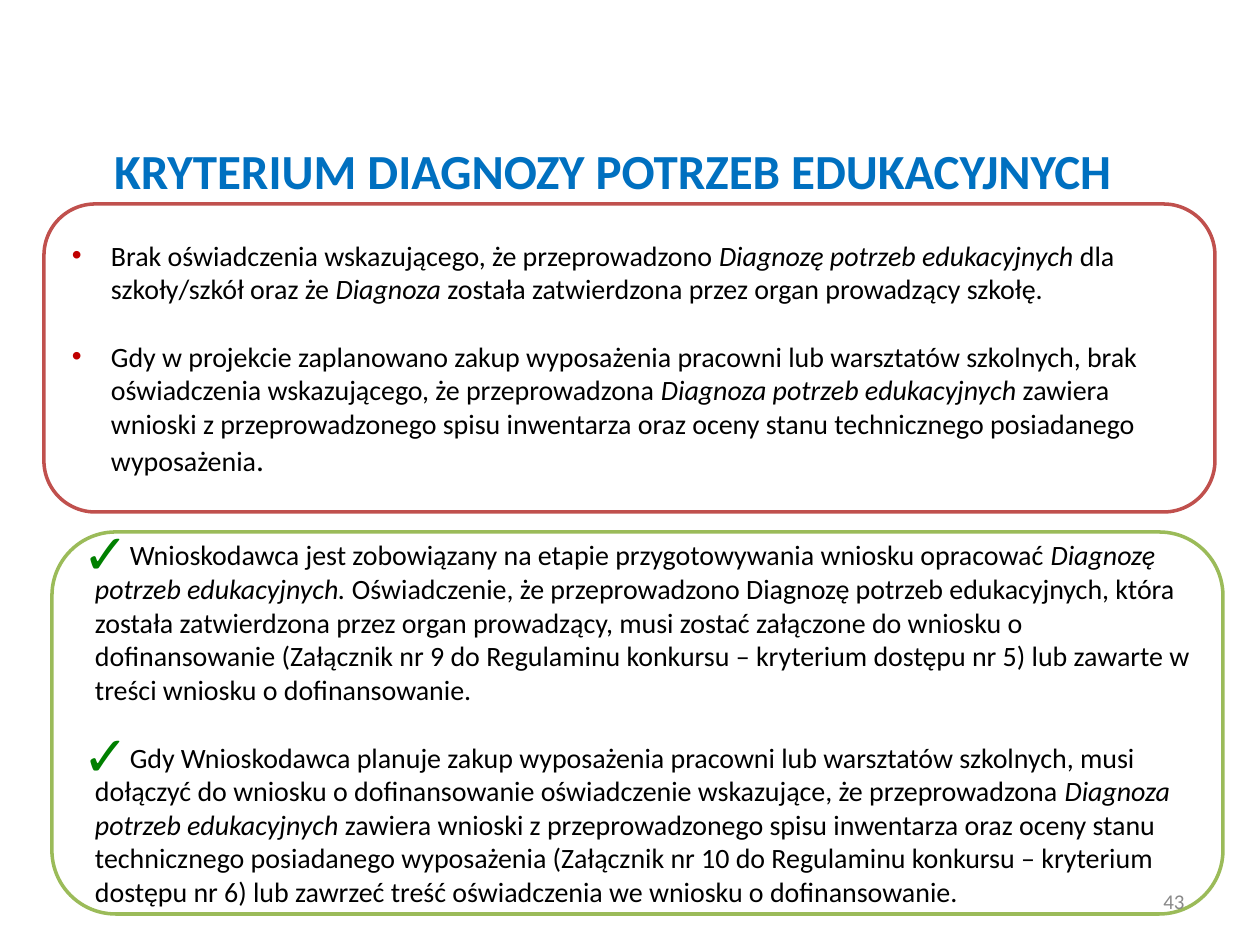
from dataclasses import dataclass

from lxml import etree
from pptx import Presentation
from pptx import util as u
from pptx.dml.color import RGBColor
from pptx.enum import shapes, text
from pptx.oxml import ns

EMU_PER_PX = 914400 / 126


@dataclass(frozen=True)
class Theme:
    font: str = "Calibri"
    title: str = "0070C0"
    ink: str = "000000"
    muted: str = "898989"
    warning: str = "C0504D"
    advice: str = "9BBB59"
    dot: str = "C00000"
    check: str = "008000"
    title_size: int = 28
    body_size: int = 16
    stop_size: int = 18
    number_size: int = 12
    gap: float = 19.5
    outline: int = 2


@dataclass(frozen=True)
class Box:
    left: int
    top: int
    width: int
    height: int

    def emu(self) -> list[int]:
        return [px(v) for v in (self.left, self.top, self.width, self.height)]


@dataclass(frozen=True)
class Piece:
    words: str
    italic: bool = False
    size: int = 16


@dataclass(frozen=True)
class Bullet:
    char: str
    color: str
    percent: int
    indent: int


@dataclass(frozen=True)
class Panel:
    frame: Box
    inset: int
    outline: str
    bullet: Bullet
    items: list[list[Piece]]


THEME = Theme()

TITLE = "KRYTERIUM DIAGNOZY POTRZEB EDUKACYJNYCH"

PANELS = [
    Panel(Box(44, 204, 1171, 308), 28, THEME.warning, Bullet("•", THEME.dot, 100, 39), [
        [Piece("Brak oświadczenia wskazującego, że przeprowadzono "),
         Piece("Diagnozę potrzeb edukacyjnych", True),
         Piece(" dla szkoły/szkół oraz że "),
         Piece("Diagnoza", True),
         Piece(" została zatwierdzona przez organ prowadzący szkołę.")],
        [Piece("Gdy w projekcie zaplanowano zakup wyposażenia pracowni lub warsztatów "
               "szkolnych, brak oświadczenia wskazującego, że przeprowadzona "),
         Piece("Diagnoza potrzeb edukacyjnych ", True),
         Piece("zawiera wnioski z przeprowadzonego spisu inwentarza oraz oceny stanu "
               "technicznego posiadanego wyposażenia"),
         Piece(".", size=THEME.stop_size)],
    ]),
    Panel(Box(52, 532, 1171, 382), 31, THEME.advice, Bullet("✓", THEME.check, 200, 12), [
        [Piece("Wnioskodawca jest zobowiązany na etapie przygotowywania wniosku opracować "),
         Piece("Diagnozę potrzeb edukacyjnych. ", True),
         Piece("Oświadczenie, że przeprowadzono Diagnozę potrzeb edukacyjnych, która została "
               "zatwierdzona przez organ prowadzący, musi zostać załączone do wniosku o "
               "dofinansowanie (Załącznik nr 9 do Regulaminu konkursu – kryterium dostępu "
               "nr 5) lub zawarte w treści wniosku o dofinansowanie.")],
        [Piece("Gdy Wnioskodawca planuje zakup wyposażenia pracowni lub warsztatów szkolnych, "
               "musi dołączyć do wniosku o dofinansowanie oświadczenie wskazujące, że "
               "przeprowadzona "),
         Piece("Diagnoza potrzeb edukacyjnych", True),
         Piece(" zawiera wnioski z przeprowadzonego spisu inwentarza oraz oceny stanu "
               "technicznego posiadanego wyposażenia (Załącznik nr 10 do Regulaminu konkursu – "
               "kryterium dostępu nr 6) lub zawrzeć treść oświadczenia we wniosku o "
               "dofinansowanie.")],
    ]),
]


def px(value: int) -> int:
    return round(value * EMU_PER_PX)


def set_all(target, **values) -> None:
    for name, value in values.items():
        setattr(target, name, value)


def place(shape, box: Box) -> None:
    set_all(shape, **dict(zip(("left", "top", "width", "height"), box.emu())))


def set_frame(frame, **margins: int) -> None:
    set_all(frame, word_wrap=True, auto_size=text.MSO_AUTO_SIZE.NONE,
            vertical_anchor=text.MSO_ANCHOR.MIDDLE, **margins)


def add_run(paragraph, words: str, size: int, color: str, **style) -> None:
    run = paragraph.add_run()
    run.text = words
    set_all(run.font, name=THEME.font, size=u.Pt(size), **style)
    run.font.color.rgb = RGBColor.from_string(color)


def set_bullet(paragraph, bullet: Bullet) -> None:
    props = paragraph._p.get_or_add_pPr()
    props.set("marL", str(px(bullet.indent)))
    props.set("indent", str(-px(bullet.indent)))
    color = etree.SubElement(props, ns.qn("a:buClr"))
    etree.SubElement(color, ns.qn("a:srgbClr"), val=bullet.color)
    etree.SubElement(props, ns.qn("a:buSzPct"), val=str(bullet.percent * 1000))
    etree.SubElement(props, ns.qn("a:buFont"), typeface="Arial")
    etree.SubElement(props, ns.qn("a:buChar"), char=bullet.char)


def draw_panel(slide, body, panel: Panel) -> None:
    # Rounded outline
    outline = slide.shapes.add_shape(shapes.MSO_SHAPE.ROUNDED_RECTANGLE, *panel.frame.emu())
    outline.shadow.inherit = False
    outline.fill.background()
    outline.line.color.rgb = RGBColor.from_string(panel.outline)
    outline.line.width = u.Pt(THEME.outline)

    # List inside the outline
    frame, inset = panel.frame, panel.inset
    place(body, Box(frame.left + inset, frame.top + inset,
                    frame.width - 2 * inset, frame.height - 2 * inset))
    content = body.text_frame
    set_frame(content, margin_left=0, margin_right=0, margin_top=0, margin_bottom=0)
    for index, pieces in enumerate(panel.items):
        item = content.add_paragraph() if index else content.paragraphs[0]
        set_bullet(item, panel.bullet)
        item.space_before = u.Pt(THEME.gap if index else 0)
        for piece in pieces:
            add_run(item, piece.words, piece.size, THEME.ink, italic=piece.italic)


def main() -> None:
    deck = Presentation()
    set_all(deck, slide_width=px(1260), slide_height=px(945))
    slide = deck.slides.add_slide(deck.slide_layouts[3])
    heading, *bodies = slide.placeholders

    # Title
    place(heading, Box(0, 135, 1225, 69))
    set_frame(heading.text_frame)
    heading_line = heading.text_frame.paragraphs[0]
    heading_line.alignment = text.PP_ALIGN.CENTER
    add_run(heading_line, TITLE, THEME.title_size, THEME.title, bold=True)

    # Shortcomings and the matching advice
    for body, panel in zip(bodies, PANELS):
        draw_panel(slide, body, panel)

    # Page number
    page = slide.shapes.add_textbox(*Box(903, 876, 294, 50).emu()).text_frame
    set_frame(page)
    page.paragraphs[0].alignment = text.PP_ALIGN.RIGHT
    add_run(page.paragraphs[0], "43", THEME.number_size, THEME.muted)

    deck.save("out.pptx")


if __name__ == "__main__":
    main()
